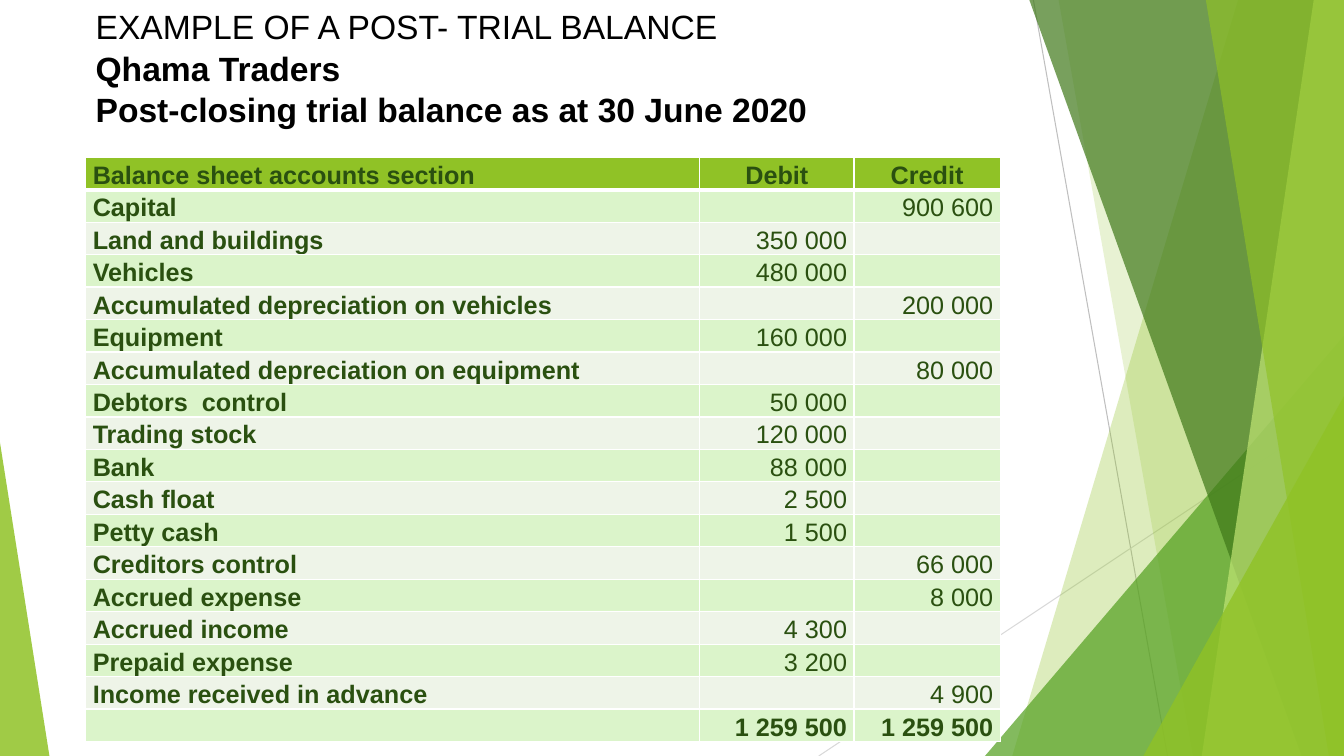
from lxml import etree
from pptx import Presentation
from pptx.dml.color import RGBColor
from pptx.enum.shapes import MSO_CONNECTOR, MSO_SHAPE
from pptx.enum.text import MSO_ANCHOR, PP_ALIGN
from pptx.oxml.ns import qn
from pptx.util import Inches, Pt

STRAIGHT = MSO_CONNECTOR.STRAIGHT
TRIANGLE = MSO_SHAPE.ISOSCELES_TRIANGLE
LEFT, CENTER, RIGHT = PP_ALIGN.LEFT, PP_ALIGN.CENTER, PP_ALIGN.RIGHT
TOP = MSO_ANCHOR.TOP

WHITE = RGBColor(0xFF, 0xFF, 0xFF)
BLACK = RGBColor(0x00, 0x00, 0x00)
GREY = RGBColor(0xBF, 0xBF, 0xBF)
PALE_GREY = RGBColor(0xD9, 0xD9, 0xD9)
LIME = RGBColor(0x90, 0xC2, 0x26)
LEAF = RGBColor(0x54, 0xA0, 0x21)
FOREST = RGBColor(0x3F, 0x78, 0x19)
LIGHT_LIME = RGBColor(0xC0, 0xE4, 0x74)
INK = RGBColor(0x2A, 0x50, 0x10)
BAND_GREEN = RGBColor(0xDB, 0xF4, 0xCA)
BAND_PALE = RGBColor(0xEE, 0xF4, 0xE8)

HEADINGS = ("Balance sheet accounts section", "Debit", "Credit")
ACCOUNTS = [
    ("Capital", "", "900 600"),
    ("Land and buildings", "350 000", ""),
    ("Vehicles", "480 000", ""),
    ("Accumulated depreciation on vehicles", "", "200 000"),
    ("Equipment", "160 000", ""),
    ("Accumulated depreciation on equipment", "", "80 000"),
    ("Debtors  control", "50 000", ""),
    ("Trading stock", "120 000", ""),
    ("Bank", "88 000", ""),
    ("Cash float", "2 500", ""),
    ("Petty cash", "1 500", ""),
    ("Creditors control", "", "66 000"),
    ("Accrued expense", "", "8 000"),
    ("Accrued income", "4 300", ""),
    ("Prepaid expense", "3 200", ""),
    ("Income received in advance", "", "4 900"),
]
TOTALS = ("", "1 259 500", "1 259 500")


class SlideBuilder:
    font = "Arial"

    def __init__(self, deck):
        self.width, self.height = deck.slide_width, deck.slide_height
        self.page = deck.slides.add_slide(deck.slide_layouts[6])
        self.shapes = self.page.shapes

    def x(self, percent):
        return round(self.width * percent / 100)

    def y(self, percent):
        return round(self.height * percent / 100)

    def paint(self, shape, color, opacity):
        shape.shadow.inherit = False
        shape.line.fill.background()
        shape.fill.solid()
        shape.fill.fore_color.rgb = color
        tint = shape._element.spPr.find(qn("a:solidFill")).find(qn("a:srgbClr"))
        etree.SubElement(tint, qn("a:alpha")).set("val", str(opacity * 1000))

    def line(self, start, end, color):
        connector = self.shapes.add_connector(
            STRAIGHT, self.x(start[0]), self.y(start[1]), self.x(end[0]), self.y(end[1]))
        connector.line.color.rgb = color
        connector.line.width = Pt(0.75)
        etree.SubElement(connector._element.spPr, qn("a:effectLst"))

    def panel(self, top_left, bottom_left, color, opacity):
        outline = self.shapes.build_freeform(self.x(top_left), 0, 1.0)
        outline.add_line_segments([
            (self.width, 0), (self.width, self.height), (self.x(bottom_left), self.height)])
        self.paint(outline.convert_to_shape(), color, opacity)

    def triangle(self, left, top, width, apex, color, opacity):
        shape = self.shapes.add_shape(
            TRIANGLE, self.x(left), self.y(top), self.x(width), self.y(100 - top))
        shape.adjustments[0] = apex
        self.paint(shape, color, opacity)

    def style_text(self, para, text, size, color, bold, align=LEFT):
        para.text = text
        para.alignment = align
        font = para.font
        font.name, font.size, font.bold = self.font, Pt(size), bold
        font.color.rgb = color

    def title(self, left, top, width, height, lines):
        box = self.shapes.add_textbox(self.x(left), self.y(top), self.x(width), self.y(height))
        frame = box.text_frame
        frame.word_wrap = True
        frame.vertical_anchor = TOP
        for index, text in enumerate(lines):
            para = frame.add_paragraph() if index else frame.paragraphs[0]
            self.style_text(para, text, 24, BLACK, index > 0)
            para.line_spacing = 1.03

    def border(self, cell, widths):
        properties = cell._tc.get_or_add_tcPr()
        for index, (side, points) in enumerate(widths.items()):
            edge = etree.Element(qn("a:ln" + side), w=str(Pt(points)))
            fill = etree.SubElement(edge, qn("a:solidFill"))
            etree.SubElement(fill, qn("a:srgbClr")).set("val", str(WHITE))
            properties.insert(index, edge)

    def cell(self, cell, text, color, bold, align, widths):
        cell.margin_left = cell.margin_right = Inches(0.07)
        cell.margin_top = cell.margin_bottom = 0
        cell.fill.solid()
        cell.fill.fore_color.rgb = color
        self.border(cell, widths)
        if text:
            para = cell.text_frame.paragraphs[0]
            self.style_text(para, text, 18, INK, bold, align)
            para.line_spacing = 1.15

    def table(self, left, top, column_widths, row_height, records):
        last = len(records) - 1
        frame = self.shapes.add_table(
            len(records), len(column_widths), self.x(left), self.y(top),
            self.x(sum(column_widths)), self.y(row_height * len(records)))
        table = frame.table
        for column, width in zip(table.columns, column_widths):
            column.width = self.x(width)
        for r, record in enumerate(records):
            table.rows[r].height = self.y(row_height)
            color = LIME if r == 0 else BAND_GREEN if r % 2 else BAND_PALE
            widths = {"L": 1, "R": 1, "T": 3 if r == 1 else 1, "B": 3 if r == 0 else 1}
            for c, text in enumerate(record):
                align = LEFT if c == 0 else CENTER if r == 0 else RIGHT
                bold = c == 0 or r in (0, last)
                self.cell(table.cell(r, c), text, color, bold, align, widths)


def main():
    deck = Presentation()
    deck.slide_width, deck.slide_height = Inches(13.33), Inches(7.5)
    slide = SlideBuilder(deck)

    slide.line((76.89, 0), (86.87, 100), GREY)
    slide.line((100, 53.73), (60.92, 100), PALE_GREY)
    slide.panel(92.12, 75.32, LIME, 30)
    slide.panel(78.77, 88.75, LIME, 20)
    slide.triangle(73.29, 44.4, 26.71, 1, LEAF, 72)
    slide.panel(76.59, 96.85, FOREST, 70)
    slide.panel(97.75, 89.42, LIGHT_LIME, 70)
    slide.panel(89.72, 98.87, LIME, 65)
    slide.triangle(85.07, 52.4, 14.93, 1, LIME, 80)
    slide.triangle(0, 58.53, 3.68, 0, LIME, 85)

    slide.table(6.38, 20.8, (45.69, 11.48, 10.88), 4.29, [HEADINGS, *ACCOUNTS, TOTALS])
    slide.title(6.38, 0, 58.51, 20, (
        "EXAMPLE OF A POST- TRIAL BALANCE",
        "Qhama Traders",
        "Post-closing trial balance as at 30 June 2020",
    ))
    deck.save("out.pptx")


if __name__ == "__main__":
    main()
